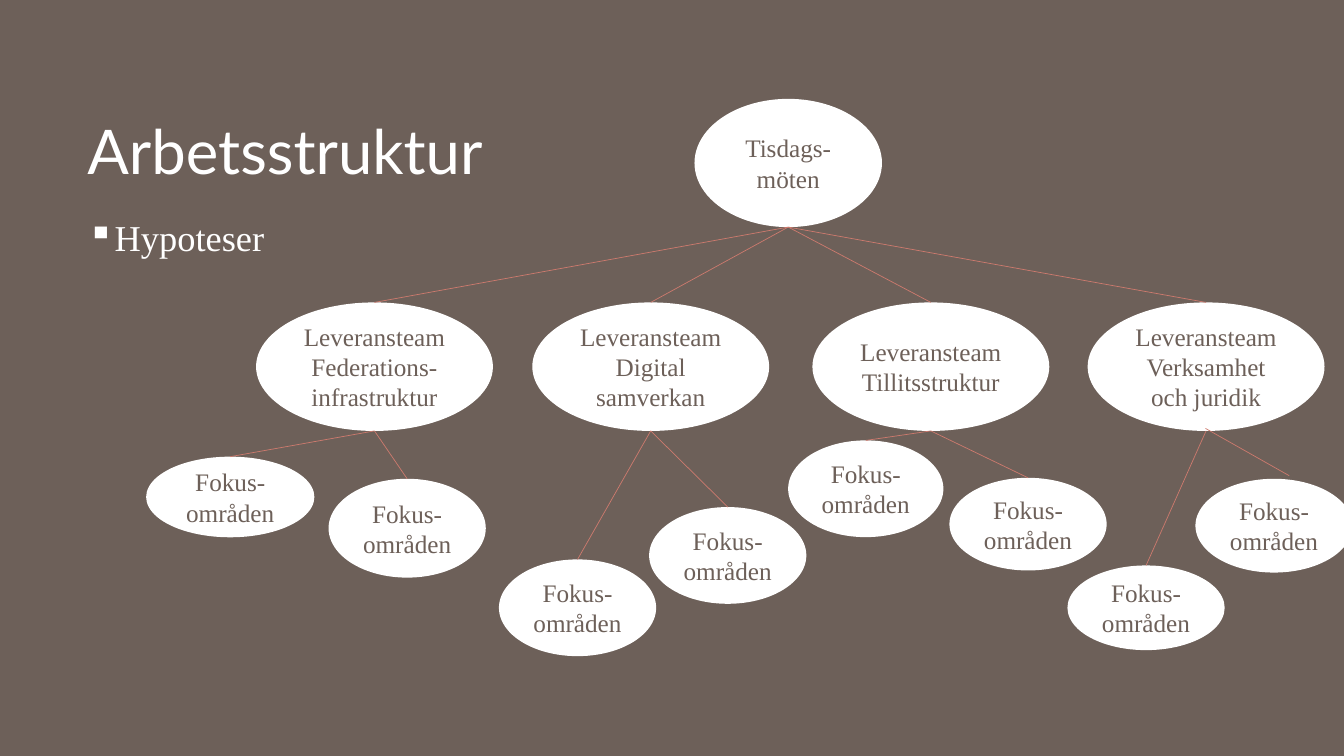
import pptx
import pptx.dml.color
import pptx.enum.shapes
import pptx.enum.text
import pptx.oxml
import pptx.oxml.ns
import pptx.util
from lxml import etree

Pt = pptx.util.Pt
BROWN, WHITE, CORAL = "6D6059", "FFFFFF", "CD7A6E"
SERIF = "Times New Roman"
FOCUS = "Fokus-områden"
TEAM_TOP, TEAM_WIDTH, TEAM_HEIGHT = 216, 169.2, 91.8
TEAMS = [
    (182.9, "Federations-infrastruktur",
     [(104.4, 326.2, 120.2, 57.6), (234.7, 342, 112.3, 70.6)]),
    (380.2, "Digital samverkan",
     [(356.4, 399.6, 112.3, 69.1), (463.7, 362.2, 112.3, 69.1)]),
    (580.3, "Tillitsstruktur",
     [(563, 314.6, 110.9, 69.1), (678.2, 341.3, 112.3, 66.2)]),
    (776.9, "Verksamhet och juridik",
     [(762.5, 403.9, 112.3, 60.5), (853.9, 342, 112.3, 67)]),
]


def color(hex_value):
    return pptx.dml.color.RGBColor.from_string(hex_value)


def style_text(frame, size, font, hex_value):
    for para in frame.paragraphs:
        for span in para.runs:
            span.font.size = Pt(size)
            span.font.name = font
            span.font.color.rgb = color(hex_value)


def add_text(page, bounds, text, size, font, anchor):
    box = page.shapes.add_textbox(*map(Pt, bounds))
    frame = box.text_frame
    frame.word_wrap = True
    frame.vertical_anchor = anchor
    frame.text = text
    frame.paragraphs[0].line_spacing = 0.9
    style_text(frame, size, font, WHITE)
    return frame.paragraphs[0]


def add_bullet(para, symbol):
    properties = para._p.get_or_add_pPr()
    properties.set("marL", str(Pt(18)))
    properties.set("indent", str(-Pt(18)))
    bullet = etree.SubElement(properties, pptx.oxml.ns.qn("a:buChar"))
    bullet.set("char", symbol)


def add_ellipse(page, bounds, text):
    ellipse = page.shapes.add_shape(
        pptx.enum.shapes.MSO_SHAPE.OVAL, *map(Pt, bounds))
    ellipse.shadow.inherit = False
    ellipse.fill.solid()
    ellipse.fill.fore_color.rgb = color(WHITE)
    ellipse.line.fill.background()
    frame = ellipse.text_frame
    frame.word_wrap = True
    frame.vertical_anchor = pptx.enum.text.MSO_ANCHOR.MIDDLE
    frame.text = text
    for para in frame.paragraphs:
        para.alignment = pptx.enum.text.PP_ALIGN.CENTER
    style_text(frame, 18, SERIF, BROWN)
    return ellipse


def add_line(page, start, end):
    line = page.shapes.add_connector(
        pptx.enum.shapes.MSO_CONNECTOR.STRAIGHT, *start, *end)
    line.line.color.rgb = color(CORAL)
    line.line.width = Pt(0.5)
    etree.SubElement(line._element.spPr, pptx.oxml.ns.qn("a:effectLst"))
    return line


def link(page, parent, child):
    start = parent.left + parent.width // 2, parent.top + parent.height
    end = child.left + child.width // 2, child.top
    add_line(page, start, end).end_connect(child, 0)


def main():
    deck = pptx.Presentation()
    deck.slide_width, deck.slide_height = Pt(960), Pt(540)
    page = deck.slides.add_slide(deck.slide_layouts[6])
    page.background.fill.solid()
    page.background.fill.fore_color.rgb = color(BROWN)

    anchors = pptx.enum.text.MSO_ANCHOR
    add_text(page, (55.4, 75.6, 657.4, 61.9), "Arbetsstruktur", 44, "Lato",
             anchors.BOTTOM)
    hypotheses = add_text(page, (55.4, 153.4, 657.4, 282.2), "Hypoteser", 26,
                          SERIF, anchors.TOP)
    add_bullet(hypotheses, "▪")

    meeting = add_ellipse(page, (496.1, 70.6, 133.9, 91.6), "Tisdags-möten")
    for left, name, focus_areas in TEAMS:
        team = add_ellipse(page, (left, TEAM_TOP, TEAM_WIDTH, TEAM_HEIGHT),
                           "Leveransteam\n" + name)
        link(page, meeting, team)
        for bounds in focus_areas:
            focus = add_ellipse(page, bounds, FOCUS)
            if bounds == TEAMS[-1][2][-1]:
                add_line(page, (Pt(861.1), Pt(306)), (Pt(920.9), Pt(339.8)))
            else:
                link(page, team, focus)

    deck.save("out.pptx")


if __name__ == "__main__":
    main()
